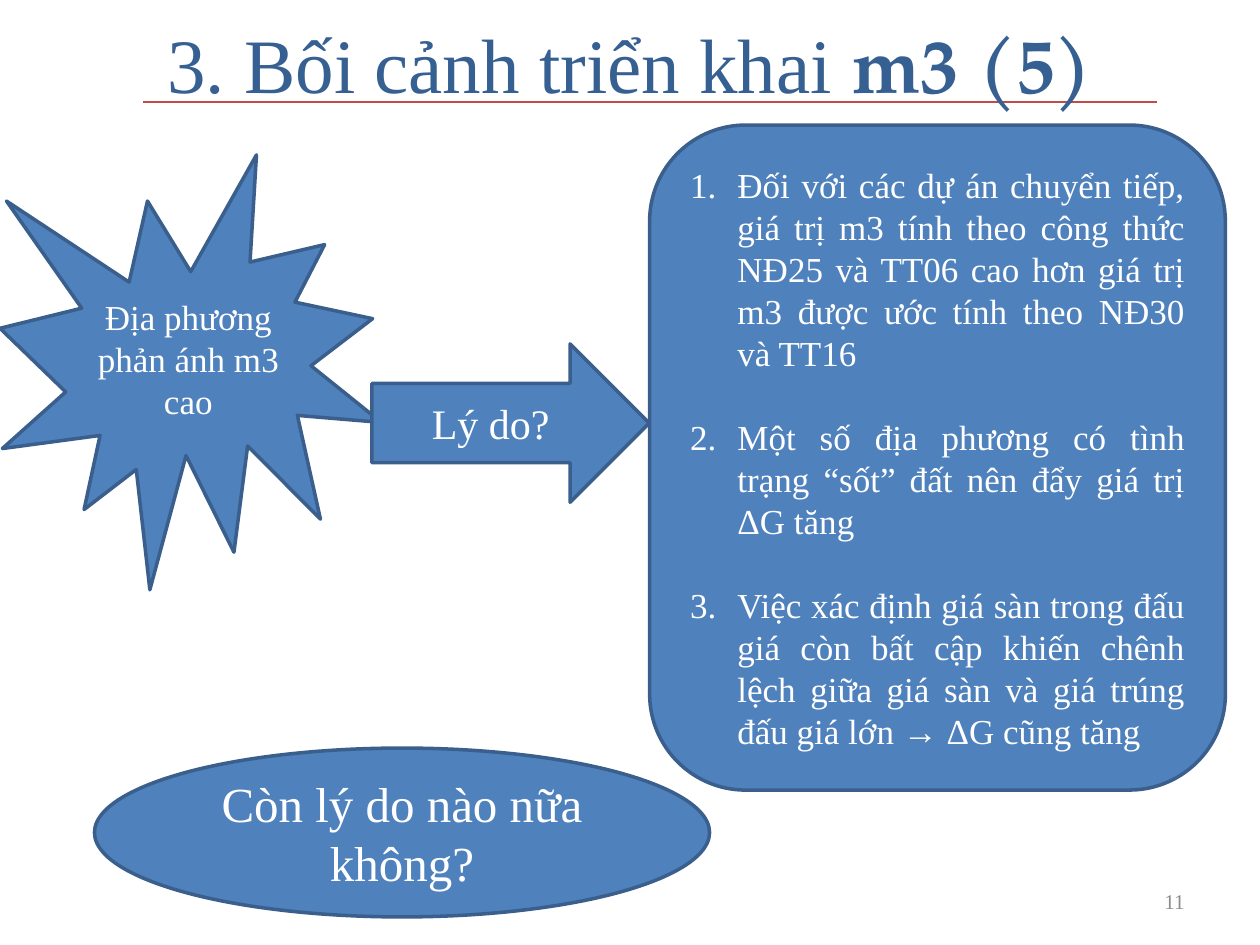
import pptx
import pptx.util
import pptx.dml.color
import pptx.enum.shapes
import pptx.enum.text
import pptx.oxml.ns
from lxml import etree

Pt = pptx.util.Pt
SHAPE = pptx.enum.shapes.MSO_SHAPE
ALIGN = pptx.enum.text.PP_ALIGN
SERIF, DISPLAY = "Times New Roman", "TeX Gyre Pagella"
BLUE, EDGE, WHITE, RED = "4F81BD", "3A5F8C", "FFFFFF", "BF4C48"
TITLE_BLUE, GREY = "376092", "8C8C8C"

# Content
TITLE = [("3. Bối cảnh triển khai ", {"name": SERIF}),
         ("m3 (5)", {"name": DISPLAY, "bold": True})]
PAGE_NUMBER = "11"
REASONS = [
    "Đối với các dự án chuyển tiếp, giá trị m3 tính theo công thức NĐ25 và TT06 "
    "cao hơn giá trị m3 được ước tính theo NĐ30 và TT16",
    "Một số địa phương có tình trạng “sốt” đất nên đẩy giá trị ΔG tăng",
    "Việc xác định giá sàn trong đấu giá còn bất cập khiến chênh lệch giữa giá sàn "
    "và giá trúng đấu giá lớn → ΔG cũng tăng",
]
# Shape, (left, top, width, height), text size, paragraphs, numbered
# The starburst label is small enough to stay inside its points
SHAPES = [
    (SHAPE.EXPLOSION1, (0, 88.5, 218, 248.5), 20, ["Địa phương phản ánh m3 cao"], False),
    (SHAPE.RIGHT_ARROW, (212.5, 196.5, 158.5, 90.5), 24, ["Lý do?"], False),
    (SHAPE.ROUNDED_RECTANGLE, (371.25, 71.5, 329, 380), 20, REASONS, True),
    (SHAPE.OVAL, (54, 427.5, 351.5, 96.5), 28, ["Còn lý do nào nữa không?"], False),
]
RULE = (82, 58.3, 661, 58.3)
LIST_INDENT, LIST_GAP = 27, 24


def colour(value):
    return pptx.dml.color.RGBColor.from_string(value)


def points(values):
    return [Pt(value) for value in values]


def apply(target, values):
    for name, value in values.items():
        setattr(target, name, value)


def add_span(para, text, size, shade, **font):
    span = para.add_run()
    span.text = text
    apply(span.font, {"size": Pt(size), "name": SERIF, **font})
    span.font.color.rgb = colour(shade)


def number(para):
    settings = para._p.get_or_add_pPr()
    settings.set("marL", str(Pt(LIST_INDENT)))
    settings.set("indent", str(-Pt(LIST_INDENT)))
    bullet = etree.SubElement(settings, pptx.oxml.ns.qn("a:buAutoNum"))
    bullet.set("type", "arabicPeriod")


def prepare(frame):
    apply(frame, {"word_wrap": True,
                  "vertical_anchor": pptx.enum.text.MSO_ANCHOR.MIDDLE})


def add_label(page, place, align, spans, size, shade):
    box = page.shapes.add_textbox(*points(place))
    prepare(box.text_frame)
    para = box.text_frame.paragraphs[0]
    para.alignment = align
    for text, font in spans:
        add_span(para, text, size, shade, **font)


def add_block(page, kind, place, size, texts, numbered):
    block = page.shapes.add_shape(kind, *points(place))
    block.shadow.inherit = False
    block.fill.solid()
    block.fill.fore_color.rgb = colour(BLUE)
    block.line.color.rgb = colour(EDGE)
    block.line.width = Pt(2)
    frame = block.text_frame
    prepare(frame)
    for index, text in enumerate(texts):
        para = frame.add_paragraph() if index else frame.paragraphs[0]
        para.alignment = ALIGN.JUSTIFY if numbered else ALIGN.CENTER
        if index:
            para.space_before = Pt(LIST_GAP)
        if numbered:
            number(para)
        add_span(para, text, size, WHITE)


def main():
    deck = pptx.Presentation()
    apply(deck, {"slide_width": Pt(720), "slide_height": Pt(540)})
    page = deck.slides.add_slide(deck.slide_layouts[6])

    # Rule under the title
    rule = page.shapes.add_connector(
        pptx.enum.shapes.MSO_CONNECTOR.STRAIGHT, *points(RULE))
    rule.line.color.rgb = colour(RED)
    rule.line.width = Pt(0.75)
    etree.SubElement(rule._element.spPr, pptx.oxml.ns.qn("a:effectLst"))

    # Page number and title
    add_label(page, (516, 500.5, 168, 28.75), ALIGN.RIGHT, [(PAGE_NUMBER, {})], 12, GREY)
    add_label(page, (36, 0, 648, 71.5), ALIGN.CENTER, TITLE, 44, TITLE_BLUE)

    # Starburst, arrow, reasons and closing question
    for block in SHAPES:
        add_block(page, *block)

    deck.save("out.pptx")


if __name__ == "__main__":
    main()
